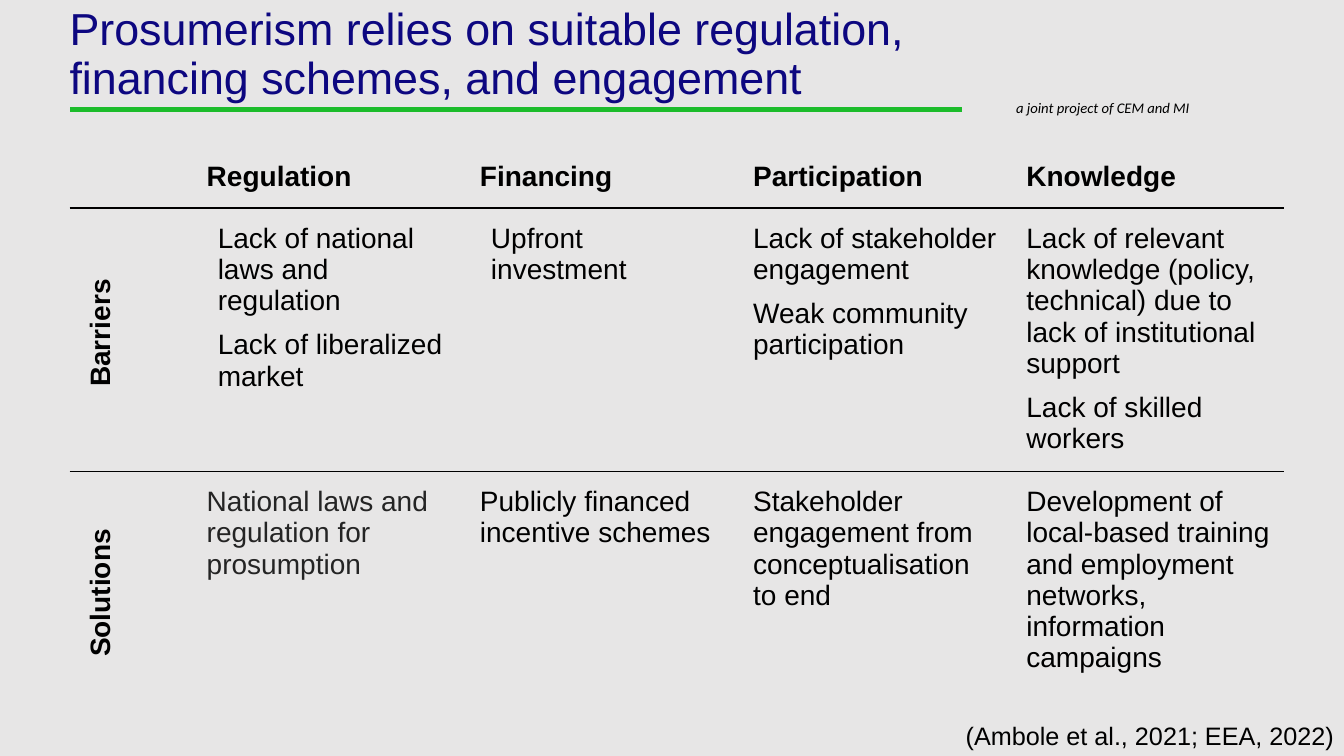
import pptx
import pptx.util
import pptx.dml.color
import pptx.enum.text
import pptx.oxml
import pptx.oxml.ns

Inches = pptx.util.Inches
Pt = pptx.util.Pt
ALIGN = pptx.enum.text.PP_ALIGN
ANCHOR = pptx.enum.text.MSO_ANCHOR

BLACK = "000000"
COLUMNS = [1.21, 2.71, 2.71, 2.71, 2.71]
ROWS = [0.61, 2.59, 2.44]
HEADS = ["Regulation", "Financing", "Participation", "Knowledge"]
BARRIERS = [
    ["Lack of national laws and regulation", "Lack of liberalized market"],
    ["Upfront investment"],
    ["Lack of stakeholder engagement", "Weak community participation"],
    ["Lack of relevant knowledge (policy, technical) due to lack of "
     "institutional support", "Lack of skilled workers"],
]
SOLUTIONS = [
    ["National laws and regulation for prosumption"],
    ["Publicly financed incentive schemes"],
    ["Stakeholder engagement from conceptualisation to end"],
    ["Development of local-based training and employment networks, "
     "information campaigns"],
]


def color(code):
    return pptx.dml.color.RGBColor.from_string(code)


def add_run(para, text, size, code=BLACK, font="Arial", bold=False, italic=False):
    run = para.add_run()
    run.text = text
    run.font.size = Pt(size)
    run.font.name = font
    run.font.bold = bold
    run.font.italic = italic
    run.font.color.rgb = color(code)


def add_label(slide, box, text, size, align=ALIGN.LEFT, anchor=ANCHOR.TOP,
              inset=None, lead=None, **style):
    frame = slide.shapes.add_textbox(*map(Inches, box)).text_frame
    frame.word_wrap = True
    frame.vertical_anchor = anchor
    if inset is not None:
        frame.margin_left = frame.margin_right = Inches(inset)
        frame.margin_top = frame.margin_bottom = Inches(inset)
    para = frame.paragraphs[0]
    para.alignment = align
    para.line_spacing = lead
    add_run(para, text, size, **style)


def add_rule(slide, box, code):
    left, top, width, height = map(Inches, box)
    right, base = left + width, top + height
    pen = slide.shapes.build_freeform(left, top)
    pen.add_line_segments([(right, top), (right, base), (left, base)], close=True)
    rule = pen.convert_to_shape()
    rule.shadow.inherit = False
    rule.fill.solid()
    rule.fill.fore_color.rgb = color(code)
    rule.line.color.rgb = color(code)
    rule.line.width = Pt(0.01)


def set_edges(cell, top, bottom):
    props = cell._tc.get_or_add_tcPr()
    space = pptx.oxml.ns.nsdecls("a")
    solid = f'<a:solidFill><a:srgbClr val="{BLACK}"/></a:solidFill>'
    for side, shown in zip("LRTB", (False, False, top, bottom)):
        paint = solid if shown else "<a:noFill/>"
        props.append(pptx.oxml.parse_xml(
            f'<a:ln{side} {space} w="{Pt(1)}">{paint}</a:ln{side}>'))
    cell.fill.background()


def fill_cell(cell, texts, bold=False, code=BLACK, indent=0, spaced=False, turned=False):
    cell.margin_left = cell.margin_top = Inches(0.15)
    cell.margin_right = Inches(0.13)
    cell.margin_bottom = Inches(0 if spaced else 0.15 if turned else 0.13)
    frame = cell.text_frame
    for index, text in enumerate(texts):
        para = frame.add_paragraph() if index else frame.paragraphs[0]
        props = para._p.get_or_add_pPr()
        props.set("marL", str(Inches(indent)))
        props.set("indent", "0")
        if spaced:
            para.space_before = Pt(3)
            para.space_after = Pt(6)
        if turned:
            para.alignment = ALIGN.CENTER
        add_run(para, text, 20, code, bold=bold)
    if turned:
        cell._tc.get_or_add_tcPr().set("vert", "vert270")


def add_matrix(slide):
    table = slide.shapes.add_table(
        len(ROWS), len(COLUMNS), Inches(0.69), Inches(1.45),
        Inches(sum(COLUMNS)), Inches(sum(ROWS))).table
    table.first_row = False
    table.horz_banding = False
    for column, width in zip(table.columns, COLUMNS):
        column.width = Inches(width)
    for index, (row, height) in enumerate(zip(table.rows, ROWS)):
        row.height = Inches(height)
        for cell in row.cells:
            set_edges(cell, index > 0, index < len(ROWS) - 1)

    fill_cell(table.cell(1, 0), ["Barriers"], bold=True, indent=0.11, turned=True)
    fill_cell(table.cell(2, 0), ["Solutions"], bold=True, turned=True)
    for index, (head, limits, cures) in enumerate(zip(HEADS, BARRIERS, SOLUTIONS), 1):
        fill_cell(table.cell(0, index), [head], bold=True)
        fill_cell(table.cell(1, index), limits,
                  indent=0.11 if index < 3 else 0, spaced=True)
        fill_cell(table.cell(2, index), cures,
                  code="242424" if index == 1 else BLACK, spaced=True)


def main():
    deck = pptx.Presentation()
    deck.slide_width = Inches(13.33)
    deck.slide_height = Inches(7.5)
    slide = deck.slides.add_slide(deck.slide_layouts[6])
    slide.background.fill.solid()
    slide.background.fill.fore_color.rgb = color("E7E6E6")

    add_rule(slide, (0.7, 1.07, 8.84, 0.04), "1CBC2B")
    add_label(slide, (9.98, 0.93, 2.43, 0.28), "a joint project of CEM and MI",
              10.5, font="Calibri", italic=True)
    add_label(slide, (0.69, 0.07, 8.86, 0.97),
              "Prosumerism relies on suitable regulation, financing schemes, "
              "and engagement", 32, inset=0, lead=0.9, code="0D0780")
    add_matrix(slide)
    add_label(slide, (8.84, 7.1, 4.49, 0.4), "(Ambole et al., 2021; EEA, 2022)",
              18, align=ALIGN.RIGHT, anchor=ANCHOR.MIDDLE)
    deck.save("out.pptx")


if __name__ == "__main__":
    main()
